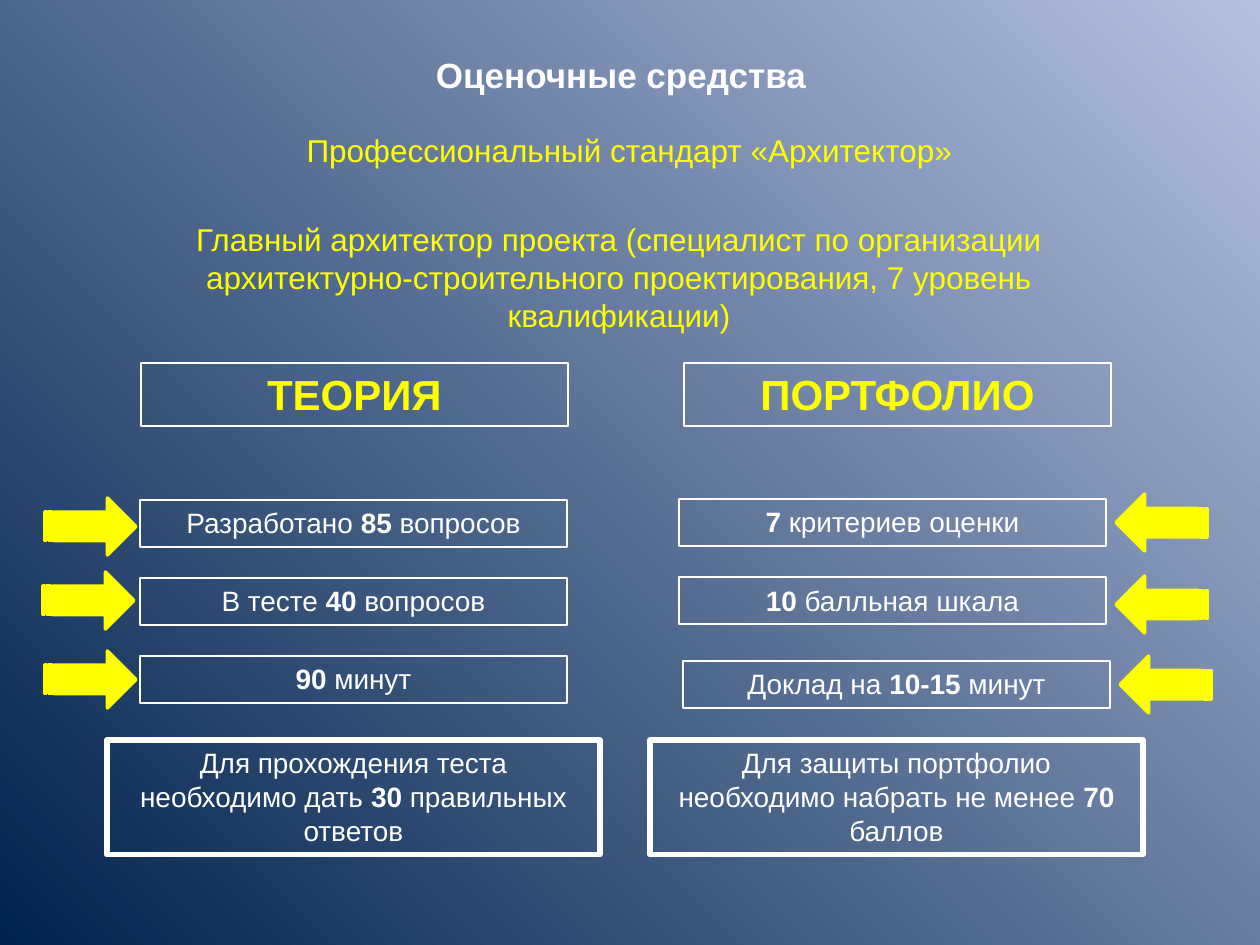
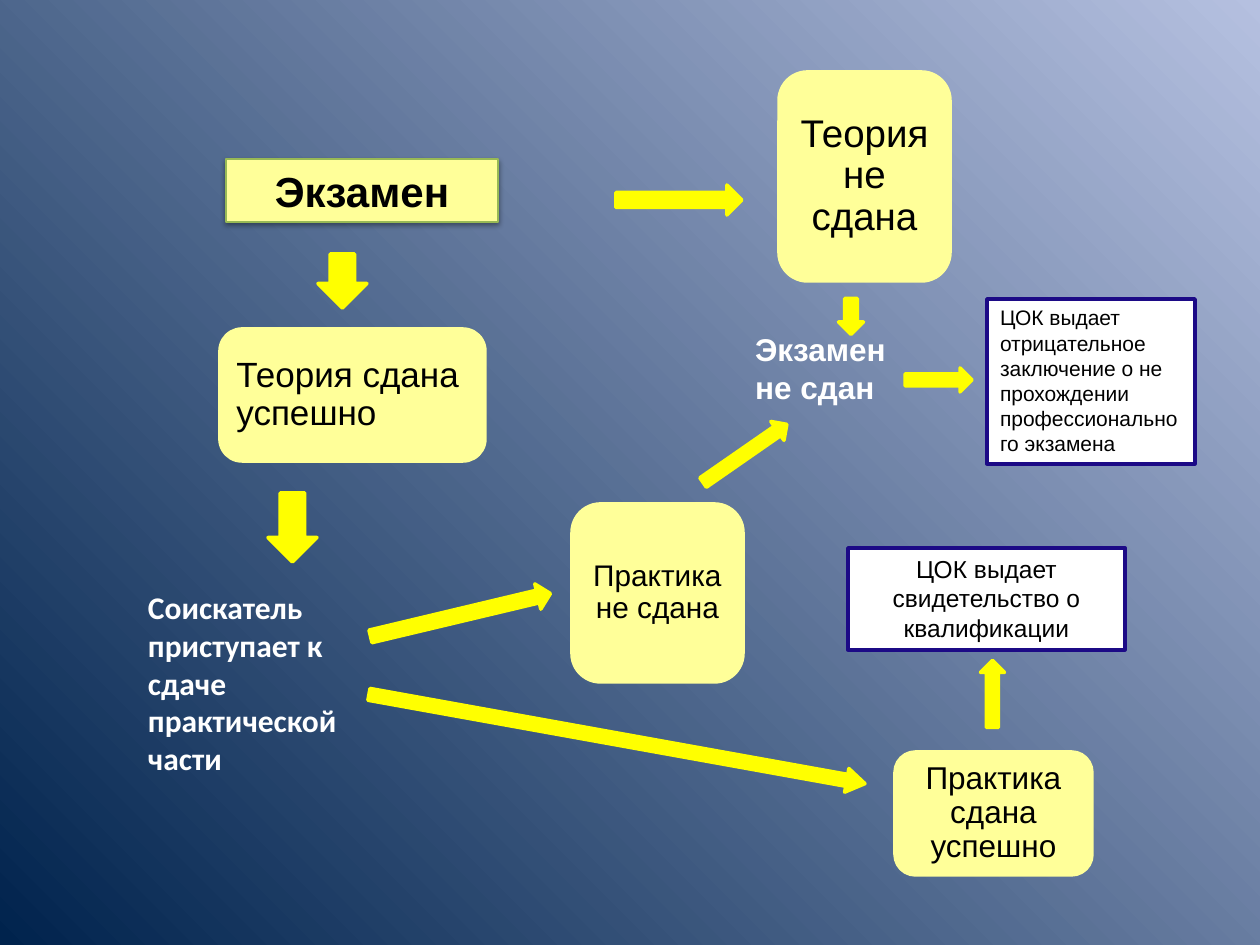
import pptx
import pptx.dml.color
import pptx.enum.shapes
import pptx.enum.text
import pptx.oxml
import pptx.oxml.ns
import pptx.util

SCALE = 914400 / 126  # EMU in one px
COLORS = {
    "sky": "BFC9E5",
    "haze": "B5C0E0",
    "night": "00234D",
    "white": "FFFFFF",
    "black": "000000",
    "yellow": "FFFF00",
    "cream": "FFFF99",
    "olive": "98B955",
    "indigo": "1C0A86",
}
SHAPES = pptx.enum.shapes.MSO_SHAPE
ALIGN = pptx.enum.text.PP_ALIGN
ANCHOR = pptx.enum.text.MSO_ANCHOR


def px(length):
    return pptx.util.Emu(round(length * SCALE))


def color(name):
    return pptx.dml.color.RGBColor.from_string(COLORS[name])


def xml(source):
    """Parse one DrawingML element whose colours are named in braces."""
    namespace = pptx.oxml.ns.nsdecls("a")
    return pptx.oxml.parse_xml(source.format(ns=namespace, **COLORS))


def inside(box, left, top, width, height):
    """Turn a frame measured from the corner of a box into slide px."""
    return box[0] + left, box[1] + top, width, height


def style(shape, fill=None, line=None, weight=2):
    if fill:
        shape.fill.solid()
        shape.fill.fore_color.rgb = color(fill)
    else:
        shape.fill.background()
    if line:
        shape.line.color.rgb = color(line)
        shape.line.width = pptx.util.Pt(weight)


def write(shape, lines, size, ink="white", bold=False, align=ALIGN.CENTER,
          anchor=ANCHOR.TOP, font="Arial", spacing=None, margins=(13, 6)):
    """Write lines of text; parts between asterisks become bold runs."""
    frame = shape.text_frame
    frame.word_wrap = True
    frame.auto_size = pptx.enum.text.MSO_AUTO_SIZE.NONE
    frame.vertical_anchor = anchor
    frame.margin_left = frame.margin_right = px(margins[0])
    frame.margin_top = frame.margin_bottom = px(margins[1])
    for index, line in enumerate(lines.split("\n")):
        paragraph = frame.add_paragraph() if index else frame.paragraphs[0]
        paragraph.alignment = align
        if spacing:
            paragraph.line_spacing = spacing
        for part, text in enumerate(line.split("*")):
            if not text:
                continue
            run = paragraph.add_run()
            run.text = text
            run.font.name = font
            run.font.size = pptx.util.Pt(size)
            run.font.bold = bold or part % 2 == 1
            run.font.color.rgb = color(ink)


def add_shape(slide, kind, frame, **look):
    shape = slide.shapes.add_shape(kind, *map(px, frame))
    shape.shadow.inherit = False
    style(shape, **look)
    return shape


def add_title(slide, frame, text, **text_look):
    title = slide.shapes.title
    title.left, title.top, title.width, title.height = map(px, frame)
    write(title, text, bold=True, **text_look)
    return title


def add_note(slide, frame, text, **text_look):
    write(slide.shapes.add_textbox(*map(px, frame)), text, 18, **text_look)


def add_panel(slide, frame, text, size, weight=0.75, **text_look):
    panel = add_shape(slide, SHAPES.RECTANGLE, frame, line="white", weight=weight)
    write(panel, text, size, **text_look)


def add_card(slide, frame, text, size, align=ALIGN.CENTER):
    card = add_shape(slide, SHAPES.ROUNDED_RECTANGLE, frame,
                     fill="cream", line="cream")
    write(card, text, size, ink="black", align=align, anchor=ANCHOR.MIDDLE,
          spacing=0.9, margins=(10, 6))


def add_outcome(slide, frame, text, size, align=ALIGN.CENTER):
    outcome = add_shape(slide, SHAPES.RECTANGLE, frame, fill="white", line="indigo")
    write(outcome, text, size, ink="black", align=align)


def add_arrow(slide, frame, kind=SHAPES.RIGHT_ARROW, rotation=0):
    arrow = add_shape(slide, kind, frame, fill="yellow", line="yellow")
    arrow.rotation = rotation
    return arrow


def paint_background(presentation):
    """Give every slide the same glow from the top right corner."""
    master = presentation.slide_master
    master.background.fill.solid()
    solid = master.element.find(".//" + pptx.oxml.ns.qn("p:bgPr"))[0]
    solid.getparent().replace(solid, xml(
        '<a:gradFill {ns} rotWithShape="1"><a:gsLst>'
        '<a:gs pos="0"><a:srgbClr val="{sky}"/></a:gs>'
        '<a:gs pos="0"><a:srgbClr val="{haze}"/></a:gs>'
        '<a:gs pos="100000"><a:srgbClr val="{night}"/></a:gs></a:gsLst>'
        '<a:path path="circle"><a:fillToRect l="100000" b="100000"/></a:path>'
        '</a:gradFill>'))


# Slide 1: assessment tools

def assessment_column(slide, box, heading, rows, total, rotation):
    """Heading, three facts with an arrow each, and the pass mark."""
    add_panel(slide, inside(box, 34, 0, 427, 63), heading, 24,
              ink="yellow", bold=True)
    for text, left, top, arrow_left, arrow_top in rows:
        add_panel(slide, inside(box, left, top, 427, 47), text, 16)
        add_arrow(slide, inside(box, arrow_left, arrow_top, 91, 57),
                  SHAPES.STRIPED_RIGHT_ARROW, rotation)
    add_panel(slide, inside(box, 0, 377, 493, 115), total, 16, weight=3)


def assessment_slide(presentation, layout):
    slide = presentation.slides.add_slide(layout)
    add_title(slide, (164, 45, 914, 59), "Оценочные средства", size=20,
              anchor=ANCHOR.MIDDLE)
    add_note(slide, (88, 214, 1062, 91),
             "Главный архитектор проекта (специалист по организации "
             "архитектурно-строительного проектирования, 7 уровень квалификации)",
             ink="yellow")
    add_note(slide, (44, 125, 1171, 89),
             "Профессиональный стандарт «Архитектор»", ink="yellow")

    theory = [
        ("Разработано *85* вопросов", 33, 137, -62, 135),
        ("В тесте *40* вопросов", 33, 215, -64, 209),
        ("*90* минут", 33, 293, -62, 288),
    ]
    assessment_column(
        slide, (107, 363), "ТЕОРИЯ", theory,
        "Для прохождения теста необходимо дать *30* правильных ответов", 0)

    portfolio = [
        ("*7* критериев оценки", 29, 136, 466, 131),
        ("*10* балльная шкала", 29, 214, 466, 213),
        ("Доклад на *10-15* минут", 33, 298, 470, 293),
    ]
    assessment_column(
        slide, (650, 363), "ПОРТФОЛИО", portfolio,
        "Для защиты портфолио необходимо набрать не менее *70* баллов", 180)


# Slide 2: course of the exam

def theory_branch(slide, box):
    """The exam, passed theory and the way to the practical part."""
    exam = add_title(slide, inside(box, 6, 0, 272, 63), "Экзамен", size=24,
                     ink="black")
    style(exam, fill="cream", line="olive", weight=0.75)
    exam.shadow.inherit = False
    effects = exam.element.spPr.find(pptx.oxml.ns.qn("a:effectLst"))
    effects.append(xml(
        '<a:outerShdw {ns} blurRad="39370" dist="20320" dir="5400000" '
        'rotWithShape="0"><a:srgbClr val="{black}"><a:alpha val="38000"/>'
        '</a:srgbClr></a:outerShdw>'))
    add_arrow(slide, inside(box, 98, 95, 49, 54), SHAPES.DOWN_ARROW)
    add_card(slide, inside(box, 0, 170, 265, 132), "Теория сдана успешно", 20,
             ALIGN.LEFT)
    add_arrow(slide, inside(box, 48, 334, 49, 69), SHAPES.DOWN_ARROW)
    add_note(slide, inside(box, -85, 423, 248, 204),
             "Соискатель приступает к сдаче практической части",
             bold=True, align=ALIGN.LEFT, font="Calibri")


def failure_branch(slide, box):
    """Failed theory, the failed exam and the negative conclusion."""
    add_arrow(slide, inside(box, 0, 113, 126, 30))
    add_card(slide, inside(box, 163, 0, 171, 209), "Теория не сдана", 22)
    add_arrow(slide, inside(box, 217, 232, 36, 25), rotation=90)
    add_note(slide, inside(box, 126, 252, 285, 89), "Экзамен\nне сдан",
             bold=True, align=ALIGN.LEFT)
    add_arrow(slide, inside(box, 289, 296, 67, 24))
    add_outcome(slide, inside(box, 371, 227, 208, 165),
                "ЦОК выдает отрицательное заключение о не прохождении "
                "профессионального экзамена", 12, ALIGN.LEFT)


def practice_branch(slide, box):
    """Both results of the practical part and the certificate."""
    add_arrow(slide, inside(box, 3, 162, 185, 26), rotation=346.6)
    add_card(slide, inside(box, 207, 64, 171, 178), "Практика не сдана", 17)
    add_arrow(slide, inside(box, 329, 2, 102, 23), rotation=325.2)
    long_arrow = add_arrow(slide, inside(box, 0, 287, 504, 24), rotation=10.2)
    long_arrow.adjustments[1] = 0.77
    add_card(slide, inside(box, 530, 312, 197, 123), "Практика сдана успешно", 18)
    add_arrow(slide, inside(box, 594, 242, 67, 24), rotation=270)
    add_outcome(slide, inside(box, 483, 108, 277, 102),
                "ЦОК выдает свидетельство о квалификации", 14)


def exam_slide(presentation, layout):
    slide = presentation.slides.add_slide(layout)
    theory_branch(slide, (220, 159))
    failure_branch(slide, (616, 72))
    practice_branch(slide, (365, 440))


def main():
    presentation = pptx.Presentation()
    presentation.slide_width, presentation.slide_height = px(1260), px(945)
    paint_background(presentation)
    title_only = presentation.slide_layouts[5]
    assessment_slide(presentation, title_only)
    exam_slide(presentation, title_only)
    presentation.save("out.pptx")


if __name__ == "__main__":
    main()
